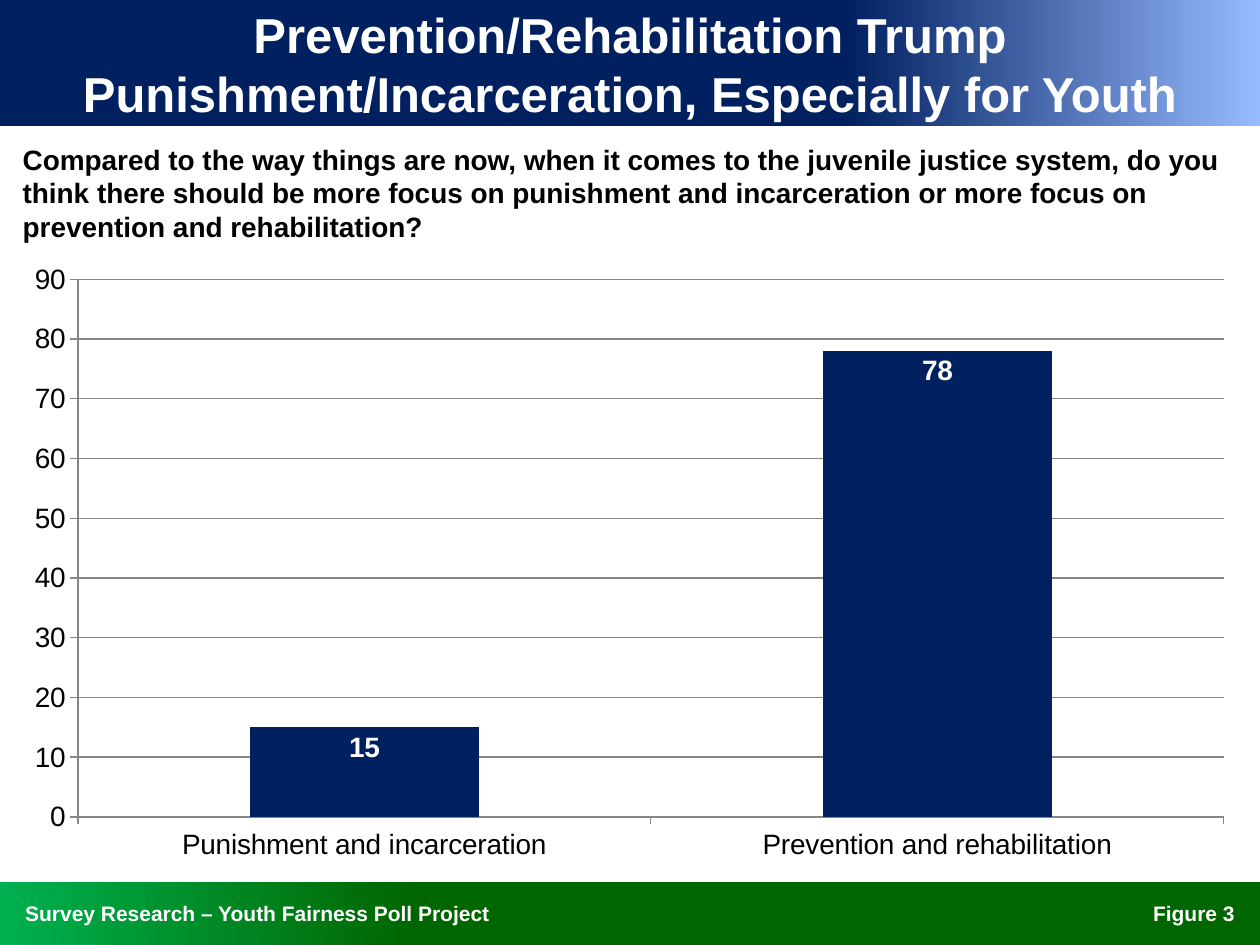
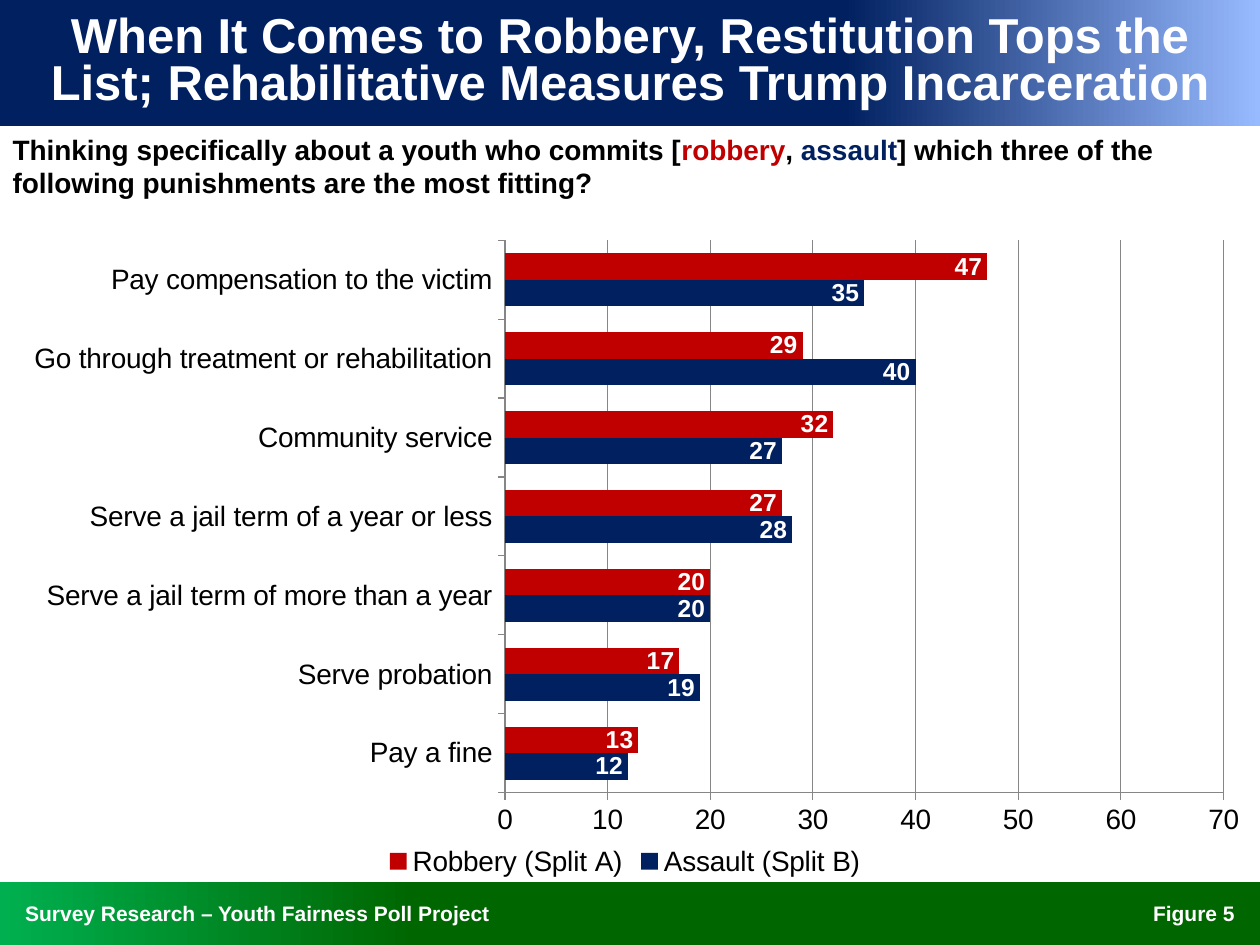
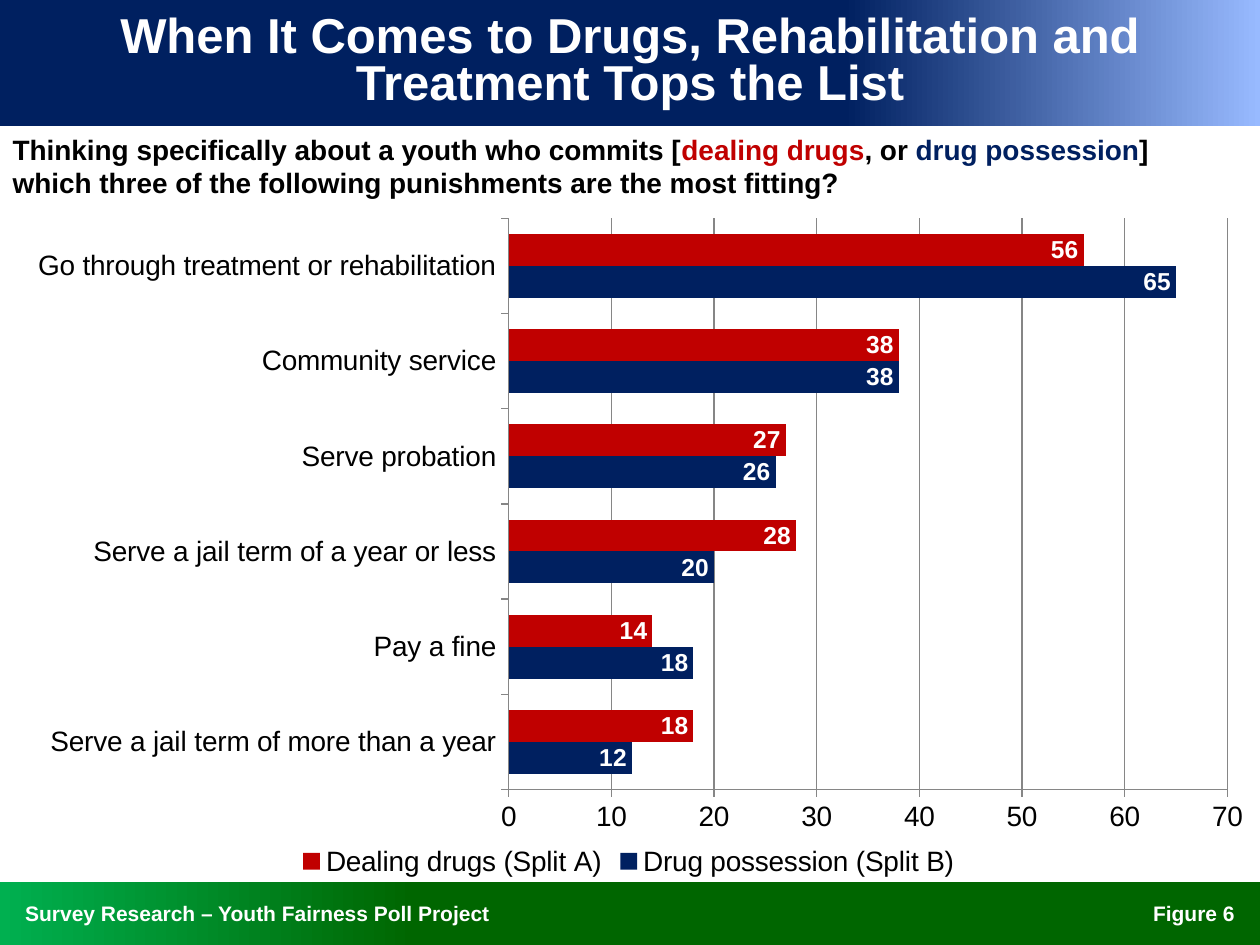
from dataclasses import dataclass

from pptx import Presentation
from pptx.chart.data import CategoryChartData
from pptx.dml.color import RGBColor
from pptx.enum.chart import XL_CHART_TYPE, XL_LABEL_POSITION, XL_LEGEND_POSITION, XL_TICK_MARK
from pptx.enum.shapes import MSO_SHAPE
from pptx.enum.text import MSO_ANCHOR, MSO_AUTO_SIZE, PP_ALIGN
from pptx.oxml import parse_xml
from pptx.oxml.ns import nsdecls
from pptx.util import Inches, Pt

COLUMNS = XL_CHART_TYPE.COLUMN_CLUSTERED
BARS = XL_CHART_TYPE.BAR_CLUSTERED
INSIDE_END = XL_LABEL_POSITION.INSIDE_END
LEGEND_BOTTOM = XL_LEGEND_POSITION.BOTTOM
TICK_OUTSIDE = XL_TICK_MARK.OUTSIDE
RECTANGLE = MSO_SHAPE.RECTANGLE
MIDDLE = MSO_ANCHOR.MIDDLE
TOP = MSO_ANCHOR.TOP
NO_AUTOFIT = MSO_AUTO_SIZE.NONE
LEFT = PP_ALIGN.LEFT
CENTER = PP_ALIGN.CENTER
RIGHT = PP_ALIGN.RIGHT


@dataclass(frozen=True)
class Theme:
    font: str = "Arial"
    navy: str = "002060"
    sky: str = "98BAFF"
    leaf: str = "00B050"
    forest: str = "006600"
    red: str = "C00000"
    black: str = "000000"
    white: str = "FFFFFF"
    grid: str = "868686"
    title_size: int = 28
    text_size: int = 16
    label_size: int = 14
    footer_size: int = 12


THEME = Theme()
CREDIT = "Survey Research – Youth Fairness Poll Project"
TITLE_AREA = (0, 0, 10, 1)
FOOTER_AREA = (0, 7, 10, 0.5)
PLOT_AREA = {"x": 0.404, "y": 0.03, "w": 0.575, "h": 0.835}

TREATMENT = "Go through treatment or rehabilitation"
SERVICE = "Community service"
SHORT_JAIL = "Serve a jail term of a year or less"
LONG_JAIL = "Serve a jail term of more than a year"
PROBATION = "Serve probation"
FINE = "Pay a fine"


def color(value):
    return RGBColor.from_string(value)


def place(shape, area):
    shape.left, shape.top, shape.width, shape.height = map(Inches, area)


def style_font(font, size, value, bold=False):
    font.name = THEME.font
    font.size = Pt(size)
    font.bold = bold
    font.color.rgb = color(value)


def write(box, spans, size, align, anchor, left=0.1, right=0.1, spacing=None):
    frame = box.text_frame
    frame.word_wrap = True
    frame.auto_size = NO_AUTOFIT
    frame.vertical_anchor = anchor
    frame.margin_left, frame.margin_right = Inches(left), Inches(right)
    frame.margin_top = frame.margin_bottom = Inches(0.05)
    para = frame.paragraphs[0]
    para.alignment = align
    para.line_spacing = spacing
    for text, value in spans:
        span = para.add_run()
        span.text = text
        style_font(span.font, size, value, bold=True)
    return para


def add_band(page, area, start, end, angle):
    band = page.shapes.add_shape(RECTANGLE, *map(Inches, area))
    band.shadow.inherit = False
    band.line.fill.background()
    band.fill.gradient()
    band.fill.gradient_angle = angle
    for stop, position, value in zip(band.fill.gradient_stops, (0, 0.33), (start, end)):
        stop.position = position
        stop.color.rgb = color(value)
    return band


def add_footer_text(page, text, area, align, left=0.1, right=0.1):
    box = page.shapes.add_textbox(*map(Inches, area))
    write(box, [(text, THEME.white)], THEME.footer_size, align, MIDDLE, left, right)
    return box


def dress_layout(layout, page):
    shared = [
        add_band(page, FOOTER_AREA, THEME.leaf, THEME.forest, 0),
        add_band(page, TITLE_AREA, THEME.sky, THEME.navy, 180),
        add_footer_text(page, CREDIT, (0, 7, 6.92, 0.5), LEFT, left=0.2),
    ]
    for position, shape in enumerate(shared, start=2):
        layout.shapes.element.insert(position, shape.element)


def add_title(page, text, spacing):
    title = page.shapes.title
    place(title, TITLE_AREA)
    write(title, [(text, THEME.white)], THEME.title_size, CENTER, MIDDLE, 0.2, 0.2, spacing)


def add_question(page, spans, left, top):
    body = page.placeholders[1]
    place(body, (left, top, 9.83, 0.33))
    para = write(body, spans, THEME.text_size, LEFT, TOP)
    properties = para._p.get_or_add_pPr()
    properties.set("marL", "0")
    properties.set("indent", "0")
    properties.append(parse_xml(f"<a:buNone {nsdecls('a')}/>"))


def add_figure_page(deck, layout, number, title, question, corner, spacing=None):
    page = deck.slides.add_slide(layout)
    add_title(page, title, spacing)
    add_question(page, question, *corner)
    add_footer_text(page, f"Figure {number}", (9, 7, 1, 0.5), RIGHT, right=0.2)
    return page


def style_axes(chart, maximum):
    values = chart.value_axis
    values.minimum_scale, values.maximum_scale, values.major_unit = 0, maximum, 10
    values.has_major_gridlines = True
    for axis in (chart.category_axis, values):
        axis.major_tick_mark = TICK_OUTSIDE
        axis.format.line.color.rgb = color(THEME.grid)
        style_font(axis.tick_labels.font, THEME.text_size, THEME.black)
    grid = values.major_gridlines.format.line
    grid.color.rgb = color(THEME.grid)
    grid.width = Pt(0.75)


def style_series(series, value, label_size):
    series.format.fill.solid()
    series.format.fill.fore_color.rgb = color(value)
    series.invert_if_negative = False
    labels = series.data_labels
    labels.show_value = True
    labels.position = INSIDE_END
    style_font(labels.font, label_size, THEME.white, bold=True)


def add_survey_chart(page, kind, area, rows, series, maximum, gap, label_size):
    data = CategoryChartData()
    categories, *columns = zip(*rows)
    data.categories = categories
    for (name, _), column in zip(series, columns):
        data.add_series(name, column)
    chart = page.shapes.add_chart(kind, *map(Inches, area), data).chart
    chart.has_title = False
    chart.has_legend = False
    style_font(chart.font, THEME.text_size, THEME.black)
    style_axes(chart, maximum)
    plot = chart.plots[0]
    plot.vary_by_categories = False
    plot.gap_width = gap
    plot.overlap = 0
    for drawn, (_, value) in zip(plot.series, series):
        style_series(drawn, value, label_size)
    return chart


def fix_plot_area(chart):
    area = chart.element.xpath("c:chart/c:plotArea")[0]
    for old in area.xpath("c:layout"):
        area.remove(old)
    sizes = "".join(f'<c:{key} val="{value}"/>' for key, value in PLOT_AREA.items())
    area.insert(0, parse_xml(
        f'<c:layout {nsdecls("c")}><c:manualLayout><c:layoutTarget val="inner"/>'
        f'<c:xMode val="edge"/><c:yMode val="edge"/>{sizes}</c:manualLayout></c:layout>'
    ))


def add_split_page(deck, layout, number, title, question, area, rows, names):
    page = add_figure_page(deck, layout, number, title, question, (0, 1), spacing=0.8)
    series = list(zip(names, (THEME.navy, THEME.red)))
    chart = add_survey_chart(page, BARS, area, rows, series, 70, 98, THEME.label_size)
    fix_plot_area(chart)
    chart.has_legend = True
    chart.legend.position = LEGEND_BOTTOM
    chart.legend.include_in_layout = False
    style_font(chart.legend.font, THEME.text_size, THEME.black)


def split_question(first, joiner, second, ending):
    return [
        ("Thinking specifically about a youth who commits [", THEME.black),
        (first, THEME.red),
        (joiner, THEME.black),
        (second, THEME.navy),
        (ending, THEME.black),
    ]


def add_focus_page(deck, layout):
    question = (
        "Compared to the way things are now, when it comes to the juvenile justice system, "
        "do you think there should be more focus on punishment and incarceration or more "
        "focus on prevention and rehabilitation?"
    )
    page = add_figure_page(
        deck, layout, 3,
        "Prevention/Rehabilitation Trump Punishment/Incarceration, Especially for Youth",
        [(question, THEME.black)], (0.08, 1.08),
    )
    rows = [("Punishment and incarceration", 15), ("Prevention and rehabilitation", 78)]
    add_survey_chart(
        page, COLUMNS, (0.08, 2, 9.83, 4.92), rows,
        [("Series 1", THEME.navy)], 90, 150, THEME.text_size,
    )
    return page


def main():
    deck = Presentation()
    deck.slide_width, deck.slide_height = Inches(10), Inches(7.5)
    layout = deck.slide_layouts[1]
    dress_layout(layout, add_focus_page(deck, layout))
    ending = "] which three of the following punishments are the most fitting?"
    add_split_page(
        deck, layout, 5,
        "When It Comes to Robbery, Restitution Tops the List; "
        "Rehabilitative Measures Trump Incarceration",
        split_question("robbery", ", ", "assault", ending),
        (0, 1.75, 9.92, 5.25),
        [
            (FINE, 12, 13),
            (PROBATION, 19, 17),
            (LONG_JAIL, 20, 20),
            (SHORT_JAIL, 28, 27),
            (SERVICE, 27, 32),
            (TREATMENT, 40, 29),
            ("Pay compensation to the victim", 35, 47),
        ],
        ("Assault (Split B)", "Robbery (Split A)"),
    )
    add_split_page(
        deck, layout, 6,
        "When It Comes to Drugs, Rehabilitation and Treatment Tops the List",
        split_question("dealing drugs", ", or ", "drug possession", ending),
        (0.03, 1.57, 9.92, 5.43),
        [
            (LONG_JAIL, 12, 18),
            (FINE, 18, 14),
            (SHORT_JAIL, 20, 28),
            (PROBATION, 26, 27),
            (SERVICE, 38, 38),
            (TREATMENT, 65, 56),
        ],
        ("Drug possession (Split B)", "Dealing drugs (Split A)"),
    )
    deck.save("out.pptx")


if __name__ == "__main__":
    main()
